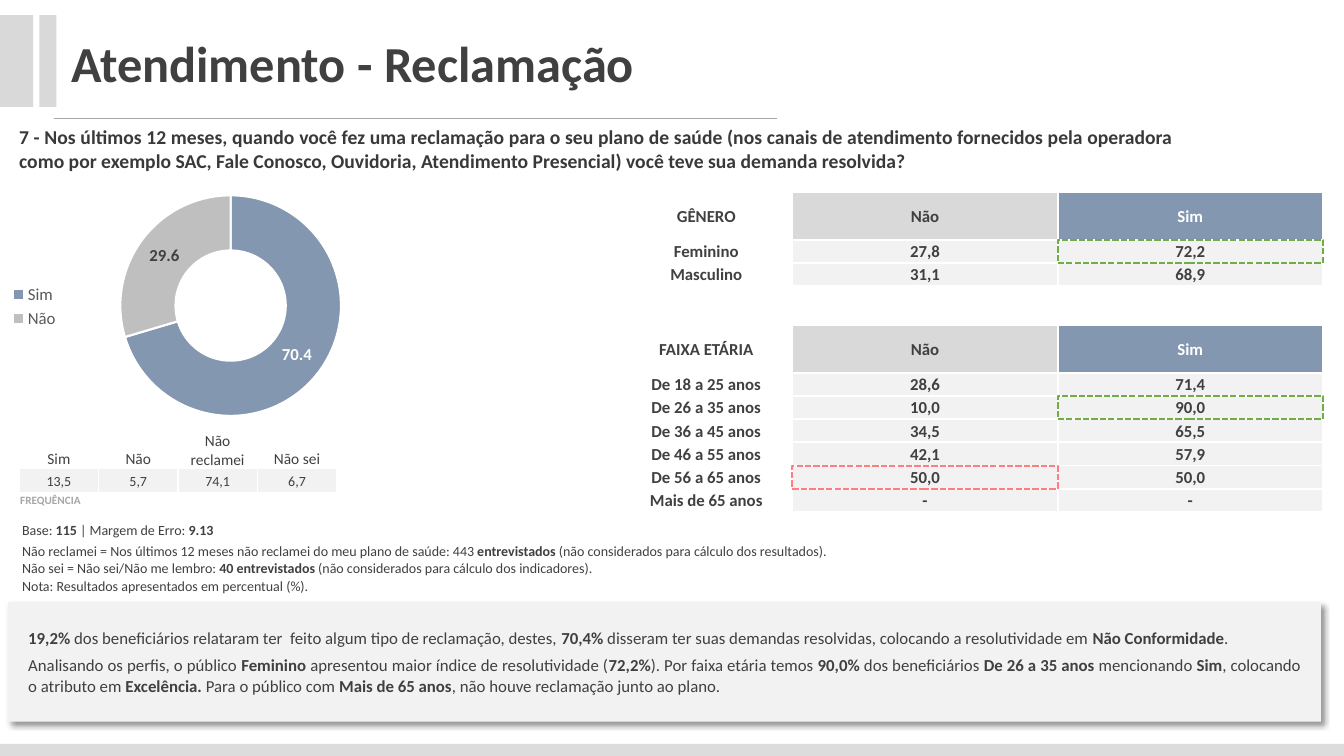
import pptx
import pptx.chart.data
import pptx.dml.color
import pptx.enum.chart
import pptx.enum.dml
import pptx.enum.shapes
import pptx.enum.text
import pptx.oxml
import pptx.oxml.ns
import pptx.util
from pptx.util import Inches

COLORS = {
    "text": "404040", "question": "3B3838", "legend": "595959", "muted": "A6A6A6",
    "white": "FFFFFF", "panel": "F2F2F2", "gray": "D9D9D9", "footer": "DCDCDC",
    "yes": "8497B0", "no": "BFBFBF", "best": "70AD47", "worst": "FF7C80",
}
FONT = "Calibri"
NO_STYLE = "{2D5ABB26-0587-4C30-8999-92F81FD0307C}"
NAMESPACE = pptx.oxml.ns.nsdecls("a")
ALIGN = pptx.enum.text.PP_ALIGN
ANCHOR = pptx.enum.text.MSO_ANCHOR

PROFILE_GROUPS = [
    ("GÊNERO", [("Feminino", "27,8", "72,2"), ("Masculino", "31,1", "68,9")]),
    ("FAIXA ETÁRIA", [
        ("De 18 a 25 anos", "28,6", "71,4"), ("De 26 a 35 anos", "10,0", "90,0"),
        ("De 36 a 45 anos", "34,5", "65,5"), ("De 46 a 55 anos", "42,1", "57,9"),
        ("De 56 a 65 anos", "50,0", "50,0"), ("Mais de 65 anos", "-", "-")]),
]
HIGHLIGHTS = [("Feminino", 2, "best"), ("De 26 a 35 anos", 2, "best"),
              ("De 56 a 65 anos", 1, "worst")]
FREQUENCIES = [("Sim", "13,5"), ("Não", "5,7"), ("Não reclamei", "74,1"), ("Não sei", "6,7")]
# Asterisks enclose bold wording
NOTES = [
    ["Base: *115 *| Margem de Erro: *9.13*"],
    ["Não reclamei = Nos últimos 12 meses não reclamei do meu plano de saúde: 443"
     "* entrevistados *(não considerados para cálculo dos resultados).",
     "Não sei = Não sei/Não me lembro: *40 entrevistados*"
     " (não considerados para cálculo dos indicadores)."],
    ["Nota: Resultados apresentados em percentual (%)."],
]
FINDINGS = [
    "*19,2% *dos beneficiários relataram ter  feito algum tipo de reclamação, destes, *70,4%*"
    " disseram ter suas demandas resolvidas, colocando a resolutividade em *Não Conformidade*.",
    "Analisando os perfis, o público *Feminino* apresentou maior índice de resolutividade "
    "(*72,2%*). Por faixa etária temos *90,0% *dos beneficiários *De 26 a 35 anos *mencionando "
    "*Sim*, colocando o atributo em *Excelência. *Para o público com *Mais de 65 anos*, "
    "não houve reclamação junto ao plano.",
]
QUESTION = ("7 - Nos últimos 12 meses, quando você fez uma reclamação para o seu plano de saúde "
            "(nos canais de atendimento fornecidos pela operadora como por exemplo SAC, Fale "
            "Conosco, Ouvidoria, Atendimento Presencial) você teve sua demanda resolvida?")


def rgb(name):
    return pptx.dml.color.RGBColor.from_string(COLORS[name])


def style_font(font, size, color="text", bold=False):
    font.name, font.size, font.bold = FONT, pptx.util.Pt(size), bold
    font.color.rgb = rgb(color)


def write(frame, lines, size, color="text", align=ALIGN.LEFT, gap=0):
    for index, line in enumerate(lines):
        paragraph = frame.paragraphs[0] if index == 0 else frame.add_paragraph()
        paragraph.alignment = align
        if index and gap:
            paragraph.space_before = pptx.util.Pt(gap)
        for position, piece in enumerate(line.split("*")):
            if piece:
                run = paragraph.add_run()
                run.text = piece
                style_font(run.font, size, color, position % 2 == 1)


def set_margins(target, horizontal, top, bottom):
    target.margin_left = target.margin_right = Inches(horizontal)
    target.margin_top, target.margin_bottom = Inches(top), Inches(bottom)


def add_box(slide, left, top, width, height, fill=None, line=None):
    shape = slide.shapes.add_shape(pptx.enum.shapes.MSO_SHAPE.RECTANGLE, Inches(left),
                                   Inches(top), Inches(width), Inches(height))
    shape.shadow.inherit = False
    if fill:
        shape.fill.solid()
        shape.fill.fore_color.rgb = rgb(fill)
    else:
        shape.fill.background()
    if line:
        shape.line.color.rgb = rgb(line)
        shape.line.width = pptx.util.Pt(1.5)
        shape.line.dash_style = pptx.enum.dml.MSO_LINE.SQUARE_DOT
    else:
        shape.line.fill.background()
    return shape


def add_text(slide, left, top, width, height, text, size, color, align, margins):
    frame = slide.shapes.add_textbox(Inches(left), Inches(top), Inches(width),
                                     Inches(height)).text_frame
    frame.word_wrap = True
    set_margins(frame, *margins)
    write(frame, [f"*{text}*"], size, color, align)


def add_plain_table(slide, left, top, widths, heights):
    frame = slide.shapes.add_table(len(heights), len(widths), Inches(left), Inches(top),
                                   Inches(sum(widths)), Inches(sum(heights)))
    table = frame.table
    table.first_row = table.horz_banding = False
    table._tbl.tblPr.find(pptx.oxml.ns.qn("a:tableStyleId")).text = NO_STYLE
    for column, width in zip(table.columns, widths):
        column.width = Inches(width)
    for row, height in zip(table.rows, heights):
        row.height = Inches(height)
    for cell in table.iter_cells():
        set_margins(cell, 0.01, 0.01, 0)
        # Keeps empty cells from stretching their row
        cell.text_frame.paragraphs[0]._p.get_or_add_endParaRPr().set("sz", "800")
    return table


def fill_cell(cell, lines, size, color="text", fill=None, align=ALIGN.CENTER,
              anchor=ANCHOR.MIDDLE, border=0):
    write(cell.text_frame, lines, size, color, align)
    cell.vertical_anchor = anchor
    if border:
        for side in "LRTB":
            cell._tc.get_or_add_tcPr().append(pptx.oxml.parse_xml(
                f'<a:ln{side} {NAMESPACE} w="{int(border * 12700)}"><a:solidFill>'
                f'<a:srgbClr val="{COLORS["white"]}"/></a:solidFill></a:ln{side}>'))
    if fill:
        cell.fill.solid()
        cell.fill.fore_color.rgb = rgb(fill)
    else:
        cell.fill.background()


def add_frame(slide, width, height):
    # Footer, title marks, rule and title
    add_box(slide, 0, height - 0.12, width, 0.12, "footer")
    for left, mark_width in ((-0.01, 0.34), (0.39, 0.17)):
        add_box(slide, left, 0.15, mark_width, 0.91, "gray")
    rule = slide.shapes.add_connector(pptx.enum.shapes.MSO_CONNECTOR.STRAIGHT, Inches(0.54),
                                      Inches(1.17), Inches(7.71), Inches(1.17))
    rule.line.color.rgb = rgb("muted")
    rule.line.width = pptx.util.Pt(0.5)
    rule._element.spPr.append(pptx.oxml.parse_xml(f"<a:effectLst {NAMESPACE}/>"))
    add_text(slide, 0.61, 0.27, 6.06, 0.71, "Atendimento - Reclamação", 36, "text",
             ALIGN.LEFT, (0.1, 0.05, 0.05))
    add_text(slide, 0.08, 1.18, 11.67, 0.58, QUESTION, 14, "question",
             ALIGN.JUSTIFY, (0.11, 0.06, 0.06))


def add_answer_chart(slide, left, top, width, height):
    data = pptx.chart.data.CategoryChartData(number_format="0.0")
    data.categories = ["Sim", "Não"]
    data.add_series("Series 1", [70.4, 29.6])
    chart = slide.shapes.add_chart(pptx.enum.chart.XL_CHART_TYPE.DOUGHNUT, Inches(left),
                                   Inches(top), Inches(width), Inches(height), data).chart
    style_font(chart.font, 10)
    chart.has_title = False
    chart.has_legend = True
    chart.legend.position = pptx.enum.chart.XL_LEGEND_POSITION.LEFT
    chart.legend.include_in_layout = False
    style_font(chart.legend.font, 12, "legend")
    plot = chart.plots[0]
    plot.vary_by_categories = True
    plot.has_data_labels = True
    labels = plot.series[0].data_labels
    labels.show_value, labels.show_percentage = True, False
    labels.number_format, labels.number_format_is_linked = "0.0", False
    style_font(labels.font, 12, "white", True)
    for index, color in enumerate(("yes", "no")):
        point = plot.series[0].points[index]
        point.format.fill.solid()
        point.format.fill.fore_color.rgb = rgb(color)
        point.format.line.color.rgb = rgb("white")
        point.format.line.width = pptx.util.Pt(1.5)
    style_font(plot.series[0].points[1].data_label.font, 12, "text", True)
    # Ring position inside the chart
    area = chart._chartSpace.chart.plotArea
    for layout in area.findall(pptx.oxml.ns.qn("c:layout")):
        area.remove(layout)
    places = "".join(f'<c:{key} val="{value}"/>' for key, value in
                     (("x", 0.3), ("y", 0.05), ("w", 0.55), ("h", 0.89)))
    area.insert(0, pptx.oxml.parse_xml(
        f'<c:layout {pptx.oxml.ns.nsdecls("c")}><c:manualLayout><c:layoutTarget val="inner"/>'
        f'<c:xMode val="edge"/><c:yMode val="edge"/>{places}</c:manualLayout></c:layout>'))


def add_frequency_table(slide, left, top, width):
    table = add_plain_table(slide, left, top, [width / 4] * 4, [0.38, 0.24, 0.24])
    for column, (answer, share) in enumerate(FREQUENCIES):
        fill_cell(table.cell(0, column), [answer], 11, anchor=ANCHOR.BOTTOM, border=1)
        fill_cell(table.cell(1, column), [share], 10, fill="panel", border=1)
    table.cell(2, 0).merge(table.cell(2, 2))
    fill_cell(table.cell(2, 0), ["*FREQUÊNCIA*"], 8, "muted", align=ALIGN.LEFT,
              anchor=ANCHOR.TOP)


def add_notes(slide, left, top, width):
    table = add_plain_table(slide, left, top, [width / 2] * 2, [0.21, 0.34, 0.21])
    for row, lines in enumerate(NOTES):
        if row < 2:
            table.cell(row, 0).merge(table.cell(row, 1))
        fill_cell(table.cell(row, 0), lines, 10, align=ALIGN.LEFT, anchor=ANCHOR.TOP)


def add_profile_table(slide, left, top):
    rows = []
    for title, entries in PROFILE_GROUPS:
        if rows:
            rows.append((0.39, ("", "", ""), (None, None)))
        rows.append((0.47, (title, "Não", "Sim"), ("gray", "yes")))
        rows += [(0.23, entry, ("panel", "panel")) for entry in entries]
    widths, heights = [1.71, 2.63, 2.63], [row[0] for row in rows]
    table = add_plain_table(slide, left, top, widths, heights)
    for row, (_, texts, fills) in enumerate(rows):
        for column, (text, fill) in enumerate(zip(texts, (None, *fills))):
            fill_cell(table.cell(row, column), [f"*{text}*"], 12,
                      "white" if fill == "yes" else "text", fill,
                      border=1.5 if column else 0)
    # Dashed frames around the notable values
    names = [texts[0] for _, texts, _ in rows]
    for name, column, color in HIGHLIGHTS:
        row = names.index(name)
        add_box(slide, left + sum(widths[:column]), top + sum(heights[:row]),
                widths[column], heights[row], line=color)


def add_findings(slide, left, top, width, height):
    panel = add_box(slide, left, top, width, height, "panel")
    panel._element.spPr.find(pptx.oxml.ns.qn("a:effectLst")).append(pptx.oxml.parse_xml(
        f'<a:outerShdw {NAMESPACE} blurRad="50800" dist="38100" dir="2700000" algn="tl" '
        'rotWithShape="0"><a:srgbClr val="000000"><a:alpha val="40000"/></a:srgbClr>'
        '</a:outerShdw>'))
    frame = panel.text_frame
    frame.word_wrap = True
    frame.vertical_anchor = ANCHOR.MIDDLE
    set_margins(frame, 0.2, 0.04, 0.04)
    write(frame, FINDINGS, 12, align=ALIGN.JUSTIFY, gap=5)


def main():
    presentation = pptx.Presentation()
    presentation.slide_width, presentation.slide_height = Inches(13.33), Inches(7.5)
    slide = presentation.slides.add_slide(presentation.slide_layouts[6])
    add_frame(slide, 13.33, 7.5)
    add_findings(slide, 0.08, 5.97, 13.02, 1.19)
    add_answer_chart(slide, 0, 1.8, 3.98, 2.49)
    add_frequency_table(slide, 0.19, 4.27, 3.15)
    add_notes(slide, 0.21, 5.17, 8.11)
    add_profile_table(slide, 6.15, 1.91)
    presentation.save("out.pptx")


if __name__ == "__main__":
    main()
